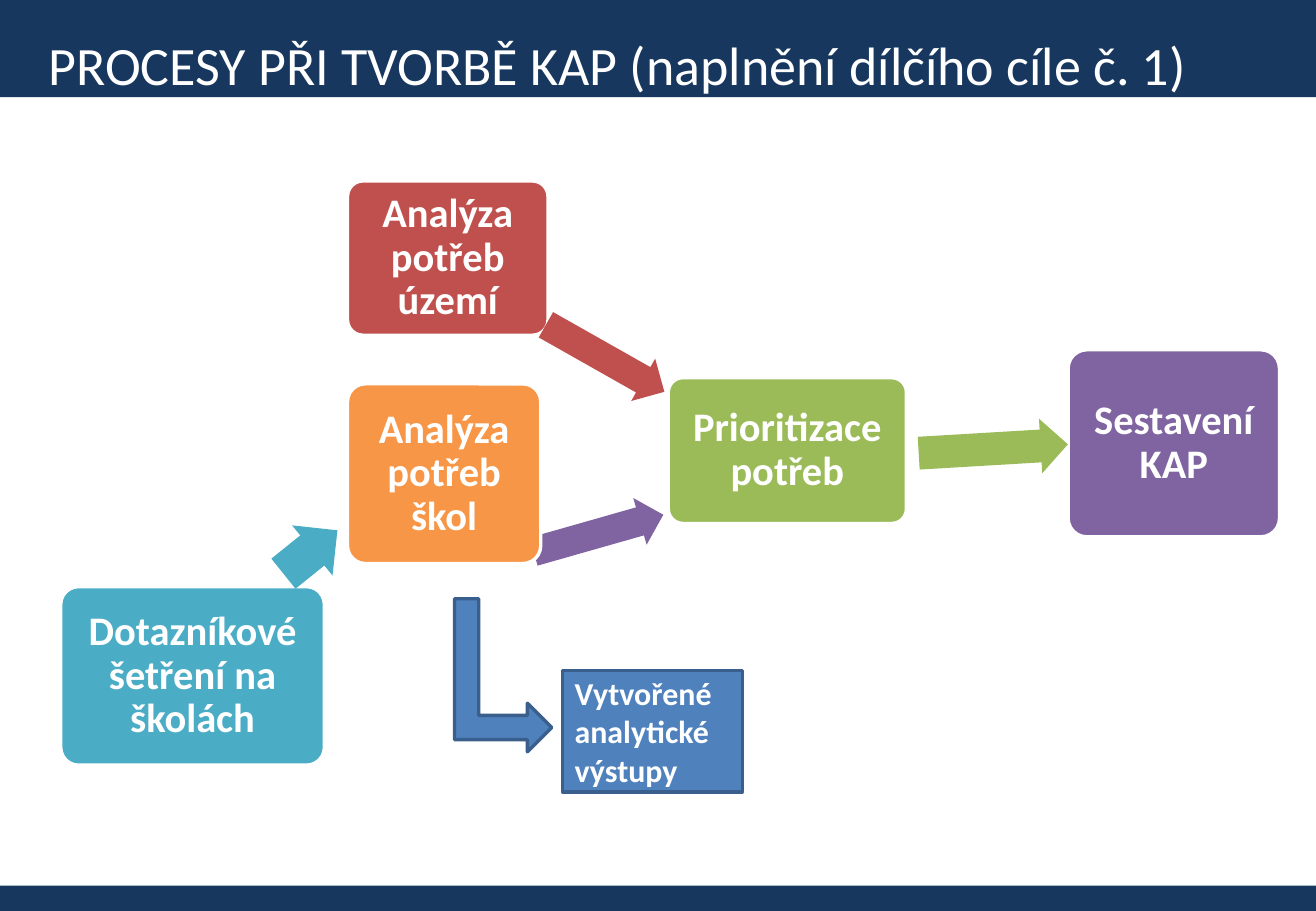
from pptx import Presentation
from pptx.dml.color import RGBColor
from pptx.enum.shapes import MSO_SHAPE as Shape
from pptx.enum.text import MSO_ANCHOR as Anchor, MSO_AUTO_SIZE as Fit, PP_ALIGN as Align
from pptx.util import Inches, Pt

NAVY = RGBColor(0x17, 0x37, 0x5E)
WHITE = RGBColor(0xFF, 0xFF, 0xFF)
RED = RGBColor(0xC0, 0x50, 0x4D)
GREEN = RGBColor(0x9B, 0xBB, 0x59)
PURPLE = RGBColor(0x80, 0x64, 0xA2)
TEAL = RGBColor(0x4B, 0xAC, 0xC6)
ORANGE = RGBColor(0xF7, 0x96, 0x46)
BLUE = RGBColor(0x4F, 0x81, 0xBD)
EDGE = RGBColor(0x3A, 0x5F, 0x8C)
WIDE, HIGH = 10.83, 7.5


class Deck:
    font = "Calibri"
    ink = WHITE
    stroke = Pt(2)

    def __init__(self):
        self.file = Presentation()
        self.file.slide_width = Inches(WIDE)
        self.file.slide_height = Inches(HIGH)
        self.slide = self.file.slides.add_slide(self.file.slide_layouts[6])

    def shape(self, kind, place, fill, line=None, turn=0):
        item = self.slide.shapes.add_shape(kind, *map(Inches, place))
        item.shadow.inherit = False
        item.fill.solid()
        item.fill.fore_color.rgb = fill
        if line is None:
            item.line.fill.background()
        else:
            item.line.color.rgb = line
            item.line.width = self.stroke
        item.rotation = turn
        return item

    def label(self, item, text, size, bold=True, align=Align.LEFT):
        frame = item.text_frame
        frame.text = text
        frame.word_wrap = True
        frame.vertical_anchor = Anchor.MIDDLE
        par = frame.paragraphs[0]
        par.alignment = align
        font = par.runs[0].font
        font.name, font.size, font.bold = self.font, Pt(size), bold
        font.color.rgb = self.ink
        return frame

    def title(self, text, place):
        item = self.slide.shapes.add_textbox(*map(Inches, place))
        frame = self.label(item, text, 32, bold=False)
        frame.vertical_anchor = Anchor.TOP
        frame.word_wrap = False
        frame.auto_size = Fit.SHAPE_TO_FIT_TEXT

    def step(self, text, place, fill):
        item = self.shape(Shape.ROUNDED_RECTANGLE, place, fill, WHITE)
        item.adjustments[0] = 0.1
        frame = self.label(item, text, 24, align=Align.CENTER)
        frame.margin_left = frame.margin_right = Inches(0.1)
        frame.margin_top = frame.margin_bottom = Inches(0.1)
        frame.paragraphs[0].line_spacing = 0.9

    def arrow(self, place, fill, turn):
        item = self.shape(Shape.RIGHT_ARROW, place, fill, turn=turn)
        item.adjustments[0] = 0.6
        item.adjustments[1] = 0.5

    def note(self, text, place):
        item = self.shape(Shape.RECTANGLE, place, BLUE, EDGE)
        self.label(item, text, 18.9)


def main():
    deck = Deck()
    for top, high in ((HIGH - 0.21, 0.21), (0, 0.8)):
        deck.shape(Shape.RECTANGLE, (0, top, WIDE, high), NAVY)
    deck.title("PROCESY PŘI TVORBĚ KAP (naplnění dílčího cíle č. 1)", (0.3, 0.21, 9.67, 0.64))

    for text, place, fill in (
        ("Analýza potřeb území", (2.86, 1.49, 1.65, 1.27), RED),
        ("Prioritizace potřeb", (5.5, 3.11, 1.96, 1.2), GREEN),
        ("Sestavení KAP", (8.79, 2.88, 1.74, 1.54), PURPLE),
        ("Dotazníkové šetření na školách", (0.5, 4.83, 2.17, 1.47), TEAL),
    ):
        deck.step(text, place, fill)

    for place, fill, turn in (
        ((4.42, 2.75, 1.12, 0.4), RED, 29.5),
        ((7.56, 3.47, 1.23, 0.45), GREEN, 356.6),
        ((4.37, 4.19, 1.11, 0.4), PURPLE, 344.1),
        ((2.27, 4.28, 0.57, 0.53), TEAL, 321.2),
    ):
        deck.arrow(place, fill, turn)

    deck.step("Analýza potřeb škol", (2.86, 3.16, 1.59, 1.48), ORANGE)
    deck.note("Vytvořené analytické výstupy", (4.63, 5.52, 1.48, 1))
    deck.shape(Shape.BENT_UP_ARROW, (3.51, 5.16, 1.26, 0.8), BLUE, EDGE, 90)
    deck.file.save("out.pptx")


if __name__ == "__main__":
    main()
